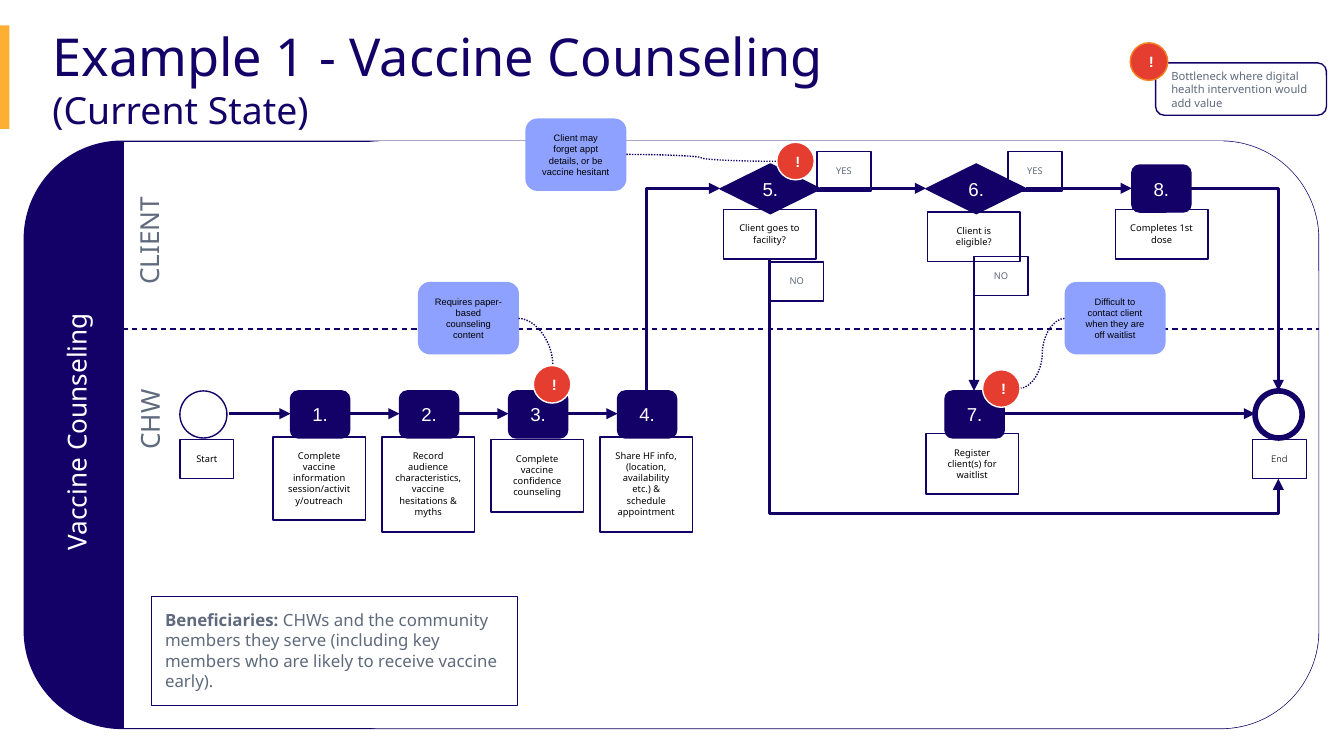
from dataclasses import dataclass

from lxml import etree
from pptx import Presentation
from pptx import util as u
from pptx.dml.color import RGBColor
from pptx.enum import dml, shapes, text
from pptx.oxml.ns import qn

Shape = shapes.MSO_SHAPE
Link = shapes.MSO_CONNECTOR
Align = text.PP_ALIGN
Anchor = text.MSO_ANCHOR


@dataclass(frozen=True)
class Theme:
    navy: str = "130168"
    grey: str = "5F6A7D"
    white: str = "FFFFFF"
    black: str = "000000"
    amber: str = "FEAF31"
    orange: str = "F58220"
    red: str = "E53E30"
    lilac: str = "8EA1FF"
    main: str = "Noto Sans"
    plain: str = "Arial"
    end: str = "Quicksand"
    title: int = 28
    subtitle: int = 20
    lane: int = 14
    step: int = 10
    body: int = 9
    alert: int = 8
    legend: int = 6
    caption: int = 5
    thin: float = 0.75
    flow: float = 1.5
    ring: float = 3


T = Theme()


def rgb(value):
    return RGBColor.from_string(value)


class Board:
    def __init__(self, prs):
        self.slide = prs.slides.add_slide(prs.slide_layouts[5])

    def style(self, font, size, color, name):
        font.size, font.name = u.Pt(size), name
        font.color.rgb = rgb(color)

    def frame(self, sp, anchor):
        tf = sp.text_frame
        tf.word_wrap = True
        tf.auto_size = text.MSO_AUTO_SIZE.NONE
        tf.vertical_anchor = anchor
        tf.margin_left = tf.margin_right = tf.margin_top = tf.margin_bottom = u.Cm(0.25)
        return tf.paragraphs[0]

    def title(self, box, main, sub):
        sp = self.slide.shapes.title
        sp.left, sp.top, sp.width, sp.height = map(u.Cm, box)
        p = self.frame(sp, Anchor.MIDDLE)
        p.alignment = Align.LEFT
        for words, size in ((main, T.title), (sub, T.subtitle)):
            r = p.add_run()
            r.text = words
            self.style(r.font, size, T.navy, T.main)

    def shape(self, kind, box, fill=None, line=T.navy, width=T.thin):
        sp = self.slide.shapes.add_shape(kind, *map(u.Cm, box))
        sp.shadow.inherit = False
        if fill:
            sp.fill.solid()
            sp.fill.fore_color.rgb = rgb(fill)
        else:
            sp.fill.background()
        if line:
            sp.line.color.rgb = rgb(line)
            sp.line.width = u.Pt(width)
        else:
            sp.line.fill.background()
        return sp

    def label(self, sp, words, size, color, name=T.main, anchor=Anchor.TOP,
              align=Align.CENTER, bold=False):
        p = self.frame(sp, anchor)
        p.alignment = align
        self.style(p.font, size, color, name)
        p.font.bold = bold
        p.add_run().text = words
        return p

    def step(self, kind, box, number):
        sp = self.shape(kind, box, T.navy)
        self.label(sp, f"{number}.", T.step, T.white, T.plain, Anchor.MIDDLE)

    def caption(self, box, words, color=T.black, name=T.main):
        self.label(self.shape(Shape.RECTANGLE, box), words, T.caption, color, name)

    def note(self, x, y, words):
        sp = self.shape(Shape.ROUNDED_RECTANGLE, (x, y, 1.91, 1.37), T.lilac, None)
        self.label(sp, words, T.caption, T.black, T.plain, Anchor.MIDDLE)

    def alert(self, x, y, line=T.white):
        sp = self.shape(Shape.OVAL, (x, y, 0.71, 0.71), T.red, line)
        self.label(sp, "!", T.alert, T.white, T.plain, Anchor.MIDDLE, bold=True)

    def side_label(self, box, words, color, align=Align.CENTER, line=None):
        sp = self.shape(Shape.RECTANGLE, box, line=line)
        sp.rotation = 270
        self.label(sp, words, T.lane, color, align=align)

    def link(self, start, end, kind=Link.ELBOW, preset=None, turned=False, bend=None,
             width=T.flow, dash=None, arrow=True):
        if turned:
            (x1, y1), (x2, y2) = start, end
            cx, cy, dx, dy = (x1 + x2) / 2, (y1 + y2) / 2, (y1 - y2) / 2, (x2 - x1) / 2
            start, end = (cx - dx, cy - dy), (cx + dx, cy + dy)
        c = self.slide.shapes.add_connector(kind, *map(u.Cm, (*start, *end)))
        c.line.color.rgb = rgb(T.navy)
        c.line.width = u.Pt(width)
        if dash:
            c.line.dash_style = dash
        props = c._element.spPr
        geometry = props.find(qn("a:prstGeom"))
        if turned:
            props.find(qn("a:xfrm")).set("rot", "16200000")
        if preset:
            geometry.set("prst", preset)
        if bend:
            etree.SubElement(geometry.find(qn("a:avLst")), qn("a:gd"),
                             name="adj1", fmla=f"val {bend}")
        if arrow:
            etree.SubElement(props.find(qn("a:ln")), qn("a:tailEnd"), type="triangle")
        etree.SubElement(props, qn("a:effectLst"))

    def dotted(self, start, end, preset=None):
        self.link(start, end, Link.CURVE, preset, width=T.thin,
                  dash=dml.MSO_LINE.ROUND_DOT, arrow=False)


def draw_lanes(b):
    b.shape(Shape.RECTANGLE, (0, 0.48, 0.18, 1.96), T.amber, None)
    b.title((0.74, 0.61, 17.15, 1.73), "Example 1 - Vaccine Counseling ", "(Current State)")
    b.shape(Shape.ROUNDED_RECTANGLE, (0.46, 2.67, 24.46, 11.1), T.navy)
    b.shape(Shape.RECTANGLE, (2.34, 2.67, 20.57, 11.1), T.white)
    b.shape(Shape.ROUNDED_RECTANGLE, (5.36, 2.67, 19.56, 11.1), T.white, None)
    b.side_label((0.97, 3.99, 3.71, 1.12), "CLIENT", T.grey)
    b.side_label((1.8, 7.37, 2.08, 1.12), "CHW", T.grey)
    b.side_label((-1.68, 6.96, 6.27, 1.12), "Vaccine Counseling", T.white, Align.LEFT, T.navy)
    b.link((2.13, 6.22), (24.92, 6.22), Link.STRAIGHT, width=T.thin,
           dash=dml.MSO_LINE.DASH, arrow=False)


def draw_steps(b):
    client_y, chw_y = 3.56, 7.82
    first_x, pitch, step_w, step_h = 5.49, 2.06, 1.12, 0.89
    captions = (
        (8.26, 1.57, "Complete vaccine information session/activity/outreach"),
        (8.26, 1.8, "Record audience characteristics, vaccine hesitations & myths"),
        (8.31, 1.37, "Complete vaccine confidence counseling"),
        (8.26, 1.8, "Share HF info, (location, availability etc.) & schedule appointment"),
    )
    b.shape(Shape.OVAL, (3.4, 7.39, 0.89, 0.89))
    b.shape(Shape.OVAL, (23.72, 7.39, 0.89, 0.89), width=T.ring)
    b.caption((3.4, 8.31, 1.02, 0.74), "Start")
    b.caption((23.67, 8.31, 1.02, 0.74), "End", name=T.end)
    for i, (y, h, words) in enumerate(captions):
        x = first_x + i * pitch
        b.link((x - pitch + step_w if i else 4.32, chw_y), (x, chw_y))
        b.step(Shape.ROUNDED_RECTANGLE, (x, 7.39, step_w, step_h), i + 1)
        b.caption((x - 0.33, y, 1.75, h), words)

    for start, end in (((15.49, client_y), (17.5, client_y)),
                       ((19.4, client_y), (21.39, client_y)),
                       ((18.97, chw_y), (23.72, chw_y))):
        b.link(start, end)
    b.link((12.22, 7.39), (13.61, client_y), preset="bentConnector2", turned=True)
    b.link((22.5, client_y), (24.16, 7.39), preset="bentConnector2")
    b.link((14.55, 4.9), (24.16, 9.05), turned=True, bend=116000)
    b.link((18.41, 4.95), (18.41, 7.39), turned=True)

    for number, x in ((5, 13.61), (6, 17.5)):
        b.step(Shape.DIAMOND, (x, 3.1, 1.9, 0.94), number)
    for number, x, y in ((7, 17.86, 7.39), (8, 21.39, 3.12)):
        b.step(Shape.ROUNDED_RECTANGLE, (x, y, step_w, step_h), number)
    for x, y, h, words in ((13.67, 3.96, 0.94, "Client goes to facility?"),
                           (17.53, 4.01, 0.94, "Client is eligible?"),
                           (17.5, 8.2, 1.14, "Register client(s) for waitlist"),
                           (21.08, 3.96, 0.94, "Completes 1st dose")):
        b.caption((x, y, 1.75, h), words)
    for x, y, words in ((15.44, 2.87, "YES"), (19.05, 2.87, "YES"),
                        (14.55, 4.95, "NO"), (18.41, 4.85, "NO")):
        b.caption((x, y, 1.02, 0.74), words, T.grey)


def draw_bottlenecks(b):
    b.note(9.93, 2.24, "Client may forget appt details, or be vaccine hesitant")
    b.note(7.9, 5.33, "Requires paper-based counseling content")
    b.note(20.12, 5.33, "Difficult to contact client when they are off waitlist")
    b.dotted((11.84, 2.92), (14.68, 3.05))
    b.dotted((9.8, 6.02), (10.45, 6.91), "curvedConnector2")
    b.dotted((20.12, 6.02), (19.28, 7.34))
    for x, y in ((14.68, 2.69), (10.08, 6.91), (18.57, 6.99)):
        b.alert(x, y)


def draw_legend(b):
    sp = b.shape(Shape.RECTANGLE, (2.87, 11.28, 6.91, 2.06))
    p = b.label(sp, "Beneficiaries:", T.body, T.grey, align=Align.LEFT)
    p.runs[0].font.bold = True
    r = p.add_run()
    r.text = (" CHWs and the community members they serve "
              "(including key members who are likely to receive vaccine early).")
    sp = b.shape(Shape.ROUNDED_RECTANGLE, (21.84, 1.19, 3.23, 0.99))
    b.label(sp, "Bottleneck where digital health intervention would add value",
            T.legend, T.grey, anchor=Anchor.MIDDLE, align=Align.LEFT)
    b.alert(21.36, 0.81, T.orange)


def main():
    prs = Presentation()
    prs.slide_width, prs.slide_height = u.Cm(25.4), u.Cm(14.29)
    b = Board(prs)
    draw_lanes(b)
    draw_steps(b)
    draw_bottlenecks(b)
    draw_legend(b)
    prs.save("out.pptx")


if __name__ == "__main__":
    main()
